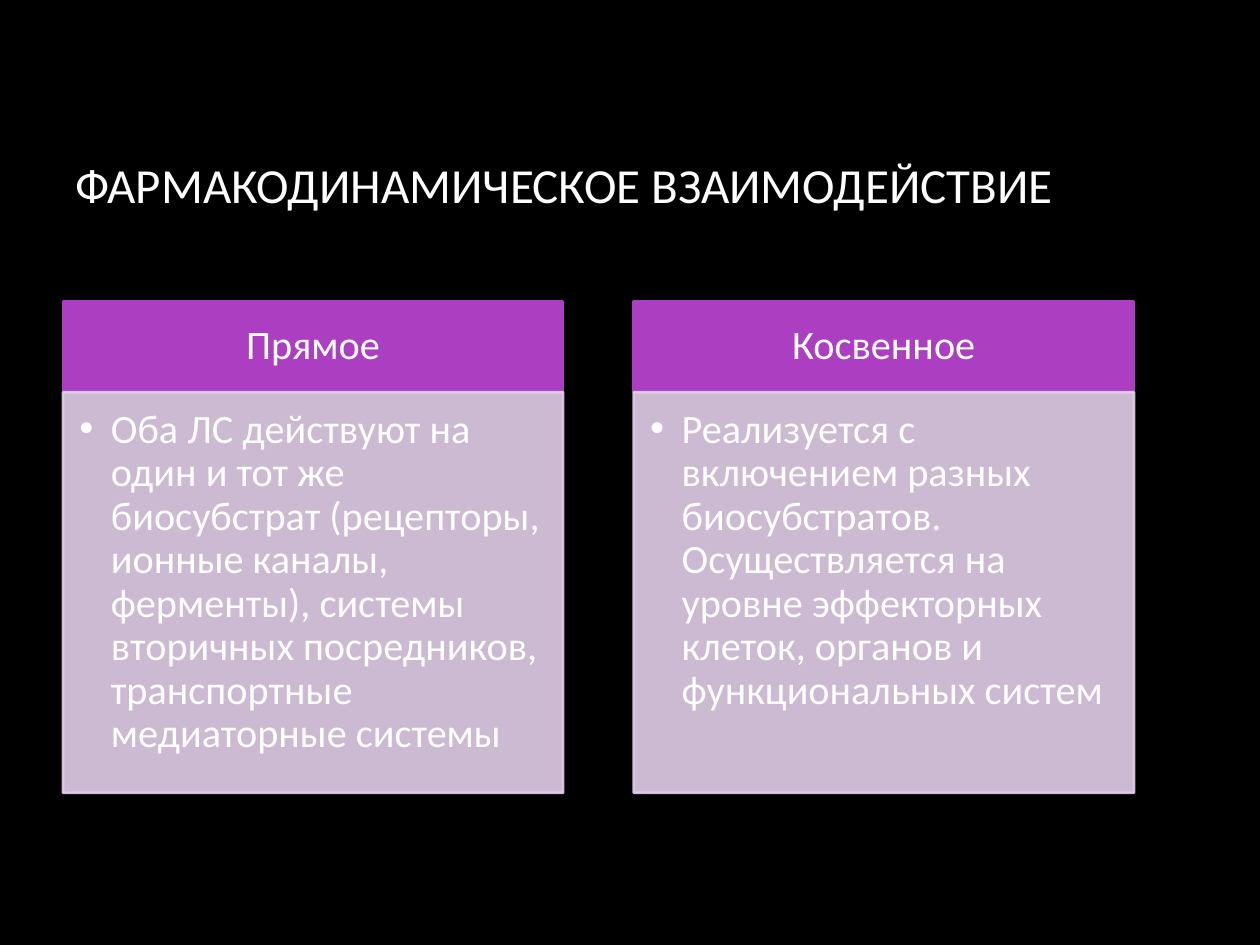
from dataclasses import dataclass

from lxml import etree
from pptx import Presentation, util as u
from pptx.dml.color import RGBColor
from pptx.enum import text
from pptx.oxml.ns import qn


@dataclass(frozen=True)
class Theme:
    back: str = "000000"
    ink: str = "FFFFFF"
    head: str = "AC3EC1"
    body: str = "E3CEE9"
    font: str = "Calibri"
    big: int = 28
    mid: int = 23
    rule: float = 1.5


LEFT, MID = text.PP_ALIGN.LEFT, text.PP_ALIGN.CENTER
TOP, HALF = text.MSO_ANCHOR.TOP, text.MSO_ANCHOR.MIDDLE

# Column and row rules, as shares of the slide
START, WIDE, STEP = 0.05, 0.397, 0.453
HEAD_TOP, HEAD_TALL, BODY_TALL = 0.319, 0.096, 0.424


class Deck:
    def __init__(self, theme):
        self.theme = theme
        self.prs = Presentation()
        self.prs.slide_width, self.prs.slide_height = u.Inches(10), u.Inches(7.5)
        self.slide = self.prs.slides.add_slide(self.prs.slide_layouts[4])
        self.paint(self.slide.background.fill, theme.back)

    def paint(self, fill, color, alpha=100):
        fill.solid()
        fill.fore_color.rgb = RGBColor.from_string(color)
        if alpha < 100:
            tint = fill.fore_color._xFill.find(qn("a:srgbClr"))
            etree.SubElement(tint, qn("a:alpha"), val=str(alpha * 1000))

    def place(self, idx, words, box, size, align, anchor, pads, bullet=False, line=0.9):
        holder = self.slide.placeholders[idx]
        wide, tall = self.prs.slide_width, self.prs.slide_height
        spots = zip(("left", "top", "width", "height"), box, (wide, tall) * 2)
        for name, share, full in spots:
            setattr(holder, name, round(share * full))

        frame = holder.text_frame
        frame.text = words
        sides = ("margin_left", "margin_top", "margin_right", "margin_bottom")
        look = dict(zip(sides, map(u.Inches, pads)))
        look |= {"word_wrap": True, "auto_size": text.MSO_AUTO_SIZE.NONE,
                 "vertical_anchor": anchor}
        para = frame.paragraphs[0]
        if bullet:
            props = para._p.get_or_add_pPr()
            props.set("marL", str(u.Inches(0.25)))
            props.set("indent", str(-u.Inches(0.25)))
            etree.SubElement(props, qn("a:buChar"), char="•")
        flow = {"alignment": align, "line_spacing": line,
                "space_before": u.Pt(0), "space_after": u.Pt(0)}
        face = {"name": self.theme.font, "size": u.Pt(size), "bold": False}
        font = para.runs[0].font
        for item, style in ((frame, look), (para, flow), (font, face)):
            for name, value in style.items():
                setattr(item, name, value)
        font.color.rgb = RGBColor.from_string(self.theme.ink)
        return holder

    def title(self, words):
        self.place(0, words, (START, 0.089, 0.85, 0.212), self.theme.big,
                   LEFT, HALF, (0.1, 0.05, 0.1, 0.05), line=1.0)

    def panel(self, holder, color, alpha=100):
        self.paint(holder.fill, color, alpha)
        holder.line.width = u.Pt(self.theme.rule)
        self.paint(holder.line.fill, color, alpha)

    def card(self, col, name, words):
        left = START + col * STEP
        head = self.place(1 + 2 * col, name, (left, HEAD_TOP, WIDE, HEAD_TALL),
                          self.theme.mid, MID, HALF, (0.18, 0.1, 0.18, 0.1))
        self.panel(head, self.theme.head)
        body = self.place(2 + 2 * col, words,
                          (left, HEAD_TOP + HEAD_TALL, WIDE, BODY_TALL),
                          self.theme.mid, LEFT, TOP, (0.13, 0.13, 0.18, 0.2), bullet=True)
        self.panel(body, self.theme.body, 90)


CARDS = (
    ("Прямое",
     "Оба ЛС действуют на один и тот же биосубстрат (рецепторы, ионные каналы, "
     "ферменты), системы вторичных посредников, транспортные медиаторные системы"),
    ("Косвенное",
     "Реализуется с включением разных биосубстратов. Осуществляется на уровне "
     "эффекторных клеток, органов и функциональных систем"),
)


def main():
    deck = Deck(Theme())
    # Heading
    deck.title("ФАРМАКОДИНАМИЧЕСКОЕ ВЗАИМОДЕЙСТВИЕ")
    # Two cards side by side
    for col, (name, words) in enumerate(CARDS):
        deck.card(col, name, words)
    deck.prs.save("out.pptx")


if __name__ == "__main__":
    main()
